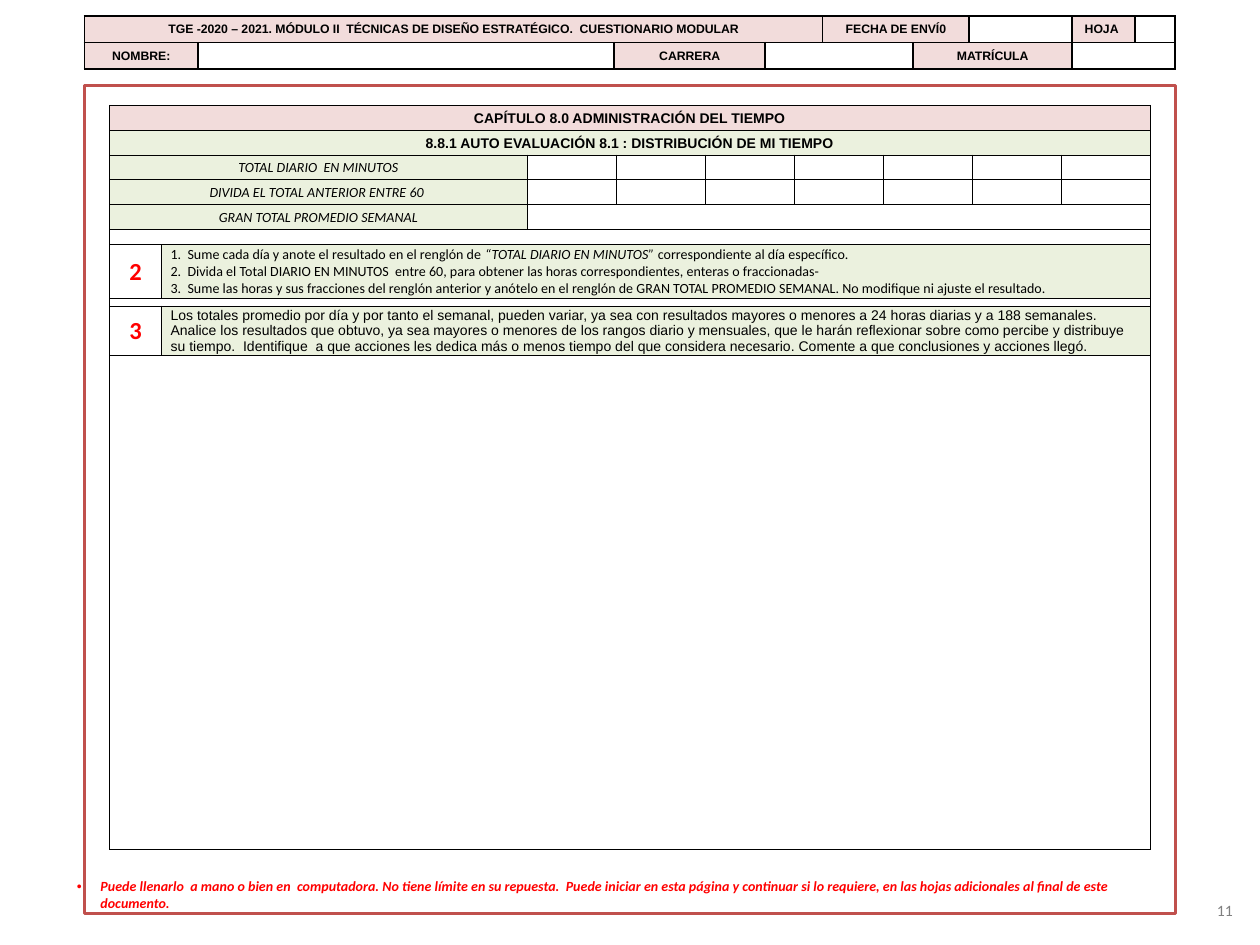
from lxml.etree import SubElement
from pptx import Presentation
from pptx.dml.color import RGBColor
from pptx.enum.shapes import MSO_SHAPE
from pptx.enum.text import MSO_ANCHOR, MSO_AUTO_SIZE, PP_ALIGN
from pptx.oxml.ns import qn
from pptx.util import Pt

BLACK = RGBColor(0x00, 0x00, 0x00)
WHITE = RGBColor(0xFF, 0xFF, 0xFF)
RED = RGBColor(0xFF, 0x00, 0x00)
GRAY = RGBColor(0x80, 0x80, 0x80)
PINK = RGBColor(0xF2, 0xDC, 0xDB)
GREEN = RGBColor(0xEB, 0xF1, 0xDE)
BRICK = RGBColor(0xC0, 0x50, 0x4D)

HEADER_COLUMNS = [65.1, 237.7, 86.3, 32.9, 51.7, 32, 58.9, 36, 22.9]
# row, column, columns spanned, label
HEADER_LABELS = [
    (0, 0, 4, "TGE -2020 – 2021. MÓDULO II  TÉCNICAS DE DISEÑO ESTRATÉGICO.  CUESTIONARIO MODULAR"),
    (0, 4, 2, "FECHA DE ENVÍ0"),
    (0, 7, 1, "HOJA"),
    (1, 0, 1, "NOMBRE:"),
    (1, 2, 1, "CARRERA"),
    (1, 5, 2, "MATRÍCULA"),
]
DAYS = 7
FORM_COLUMNS = [29.8, 209] + [50.86] * DAYS
FORM_ROWS = [14.2, 14.2, 14.1, 14.1, 14.2, 9, 30.4, 4.6, 28, 282.8]
SPACER_ROWS = (5, 7, 9)
TITLES = [
    ("CAPÍTULO 8.0 ADMINISTRACIÓN DEL TIEMPO", PINK),
    ("8.8.1 AUTO EVALUACIÓN 8.1 : DISTRIBUCIÓN DE MI TIEMPO", GREEN),
]
TOTALS = ["TOTAL DIARIO  EN MINUTOS", "DIVIDA EL TOTAL ANTERIOR ENTRE 60 ",
          "GRAN TOTAL PROMEDIO SEMANAL"]
# each step is a list of (text, italic)
STEPS = [
    [("1.  Sume cada día y anote el resultado en el renglón de ", False),
     ("“TOTAL DIARIO EN MINUTOS”", True),
     (" correspondiente al día específico.", False)],
    [("2.  Divida el Total DIARIO EN MINUTOS  entre 60, para obtener las horas "
      "correspondientes, enteras o fraccionadas-", False)],
    [("3.  Sume las horas y sus fracciones del renglón anterior y anótelo en el renglón de "
      "GRAN TOTAL PROMEDIO SEMANAL. No modifique ni ajuste el resultado.", False)],
]
ANALYSIS = (
    "Los totales promedio por día y por tanto el semanal, pueden variar, ya sea con resultados "
    "mayores o menores a 24 horas diarias y a 188 semanales. Analice los resultados que obtuvo, "
    "ya sea mayores o menores de los rangos diario y mensuales, que le harán reflexionar sobre "
    "como percibe y distribuye su tiempo.  Identifique  a que acciones les dedica más o menos "
    "tiempo del que considera necesario. Comente a que conclusiones y acciones llegó.")
NOTE = (
    "Puede llenarlo  a mano o bien en  computadora. No tiene límite en su repuesta.  Puede "
    "iniciar en esta página y continuar si lo requiere, en las hojas adicionales al final de "
    "este documento.")


def style(paragraph, size, name="Arial", color=BLACK, bold=False, italic=None,
          align=PP_ALIGN.CENTER):
    font = paragraph.font
    font.size, font.name, font.bold, font.italic = Pt(size), name, bold, italic
    font.color.rgb = color
    paragraph.alignment = align


def hang(paragraph, indent):
    properties = paragraph._p.get_or_add_pPr()
    properties.set("marL", str(Pt(indent)))
    properties.set("indent", str(Pt(-indent)))


def add_grid(slide, left, top, columns, rows, border, margins):
    """Add a ruled table whose cells start empty, unfilled and free to shrink."""
    table = slide.shapes.add_table(len(rows), len(columns), Pt(left), Pt(top),
                                   Pt(sum(columns)), Pt(sum(rows))).table
    table.first_row = table.horz_banding = False
    for column, width in zip(table.columns, columns):
        column.width = Pt(width)
    for row, height in zip(table.rows, rows):
        row.height = Pt(height)
    for cell in table.iter_cells():
        (cell.margin_left, cell.margin_top,
         cell.margin_right, cell.margin_bottom) = map(Pt, margins)
        cell.vertical_anchor = MSO_ANCHOR.MIDDLE
        properties = cell._tc.get_or_add_tcPr()
        for side in ("a:lnL", "a:lnR", "a:lnT", "a:lnB"):
            line = SubElement(properties, qn(side), w=str(Pt(border)))
            SubElement(SubElement(line, qn("a:solidFill")), qn("a:srgbClr"), val=str(BLACK))
        cell.fill.background()
        SubElement(cell.text_frame.paragraphs[0]._p, qn("a:endParaRPr"), sz="100")
    return table


def span(table, row, column, count, fill=None):
    cell = table.cell(row, column)
    if count > 1:
        cell.merge(table.cell(row, column + count - 1))
    if fill is not None:
        cell.fill.solid()
        cell.fill.fore_color.rgb = fill
    return cell


def write(cell, text, size, **look):
    cell.text = text
    style(cell.text_frame.paragraphs[0], size, **look)


def add_note(slide, left, top, width, height):
    note = slide.placeholders[1]
    note.left, note.top, note.width, note.height = map(Pt, (left, top, width, height))
    note.fill.solid()
    note.fill.fore_color.rgb = WHITE
    frame = note.text_frame
    frame.auto_size = MSO_AUTO_SIZE.NONE
    frame.vertical_anchor = MSO_ANCHOR.MIDDLE
    frame.margin_right = Pt(12)
    frame.text = NOTE
    paragraph = frame.paragraphs[0]
    style(paragraph, 8, "Calibri", RED, bold=True, italic=True, align=PP_ALIGN.LEFT)
    paragraph.space_before = Pt(0)
    hang(paragraph, 13.5)


def add_form(slide, left, top):
    table = add_grid(slide, left, top, FORM_COLUMNS, FORM_ROWS, 0.5, (5.1, 0.6, 5.1, 0))
    full = len(FORM_COLUMNS)
    for row, (title, fill) in enumerate(TITLES):
        write(span(table, row, 0, full, fill), title, 8, bold=True)
    for row, label in enumerate(TOTALS, len(TITLES)):
        write(span(table, row, 0, 2, GREEN), label, 8, name="Calibri", italic=True)
    span(table, 4, 2, DAYS)
    for row in SPACER_ROWS:
        span(table, row, 0, full, WHITE)
    for row, number in ((6, "2"), (8, "3")):
        write(span(table, row, 0, 1, WHITE), number, 14, name="Calibri", color=RED, bold=True)

    steps = span(table, 6, 1, full - 1, GREEN).text_frame
    for index, parts in enumerate(STEPS):
        paragraph = steps.add_paragraph() if index else steps.paragraphs[0]
        style(paragraph, 8, "Calibri", align=PP_ALIGN.JUSTIFY)
        hang(paragraph, 14.4)
        for text, italic in parts:
            run = paragraph.add_run()
            run.text = text
            run.font.italic = italic
    write(span(table, 8, 1, full - 1, GREEN), ANALYSIS, 8, align=PP_ALIGN.LEFT)


def add_frame(slide, left, top, width, height):
    frame = slide.shapes.add_shape(MSO_SHAPE.RECTANGLE, *map(Pt, (left, top, width, height)))
    frame.shadow.inherit = False
    frame.fill.background()
    frame.line.color.rgb = BRICK
    frame.line.width = Pt(2)


def add_page_number(slide, left, top, width, height):
    number = slide.shapes.add_textbox(*map(Pt, (left, top, width, height))).text_frame
    number.word_wrap = True
    number.vertical_anchor = MSO_ANCHOR.MIDDLE
    number.text = "11"
    style(number.paragraphs[0], 9, "Calibri", GRAY, align=PP_ALIGN.RIGHT)


def add_header(slide, left, top):
    table = add_grid(slide, left, top, HEADER_COLUMNS, [15, 15], 1, (7.2, 3.4, 7.2, 3.4))
    for row, column, count, label in HEADER_LABELS:
        align = PP_ALIGN.LEFT if label == "HOJA" else PP_ALIGN.CENTER
        write(span(table, row, column, count, PINK), label, 7, bold=True, align=align)
    span(table, 1, 3, 2)
    span(table, 1, 7, 2)


def main():
    presentation = Presentation()
    presentation.slide_width, presentation.slide_height = Pt(720), Pt(540)
    slide = presentation.slides.add_slide(presentation.slide_layouts[1])
    title = slide.shapes.title._element
    title.getparent().remove(title)
    add_note(slide, 36.7, 502.6, 646.6, 17.3)
    add_form(slide, 62.6, 60.2)
    add_frame(slide, 48.2, 49, 623.5, 473)
    add_page_number(slide, 543.6, 505.6, 168, 28.8)
    add_header(slide, 48.2, 9.2)
    presentation.save("out.pptx")


if __name__ == "__main__":
    main()
